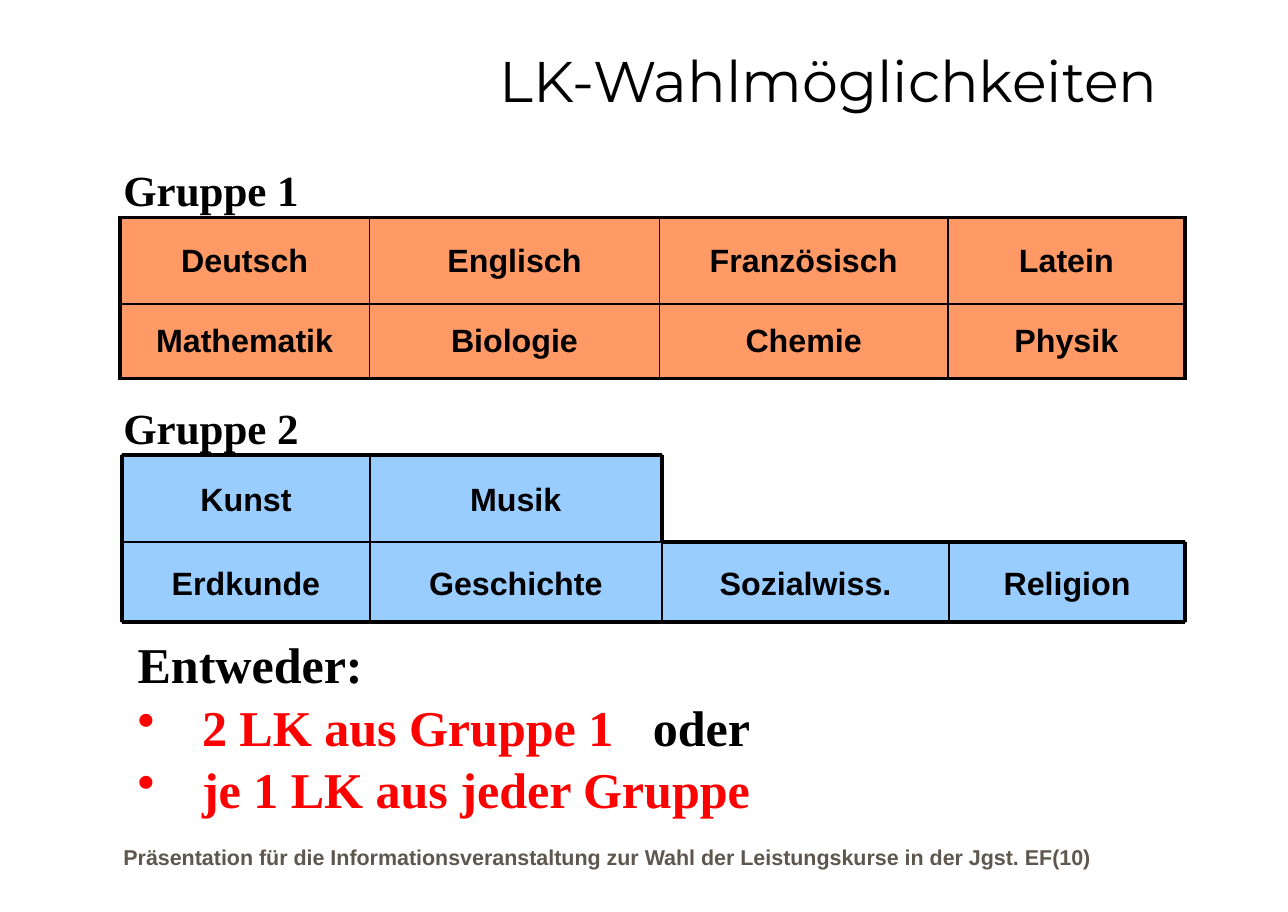
from lxml.etree import SubElement
from pptx import Presentation
from pptx.dml.color import RGBColor
from pptx.enum.shapes import MSO_CONNECTOR as Connector, MSO_SHAPE as Shape
from pptx.enum.text import MSO_ANCHOR as Anchor, PP_ALIGN as Align
from pptx.oxml import parse_xml
from pptx.oxml.ns import nsdecls, qn
from pptx.util import Inches, Pt

BLACK = RGBColor(0x00, 0x00, 0x00)
RED = RGBColor(0xFF, 0x00, 0x00)
GREY = RGBColor(0x5E, 0x57, 0x4E)
ORANGE = RGBColor(0xFF, 0x99, 0x66)
BLUE = RGBColor(0x99, 0xCC, 0xFF)
THIN, THICK = 1, 2.25

GROUP_1 = [["Deutsch", "Englisch", "Französisch", "Latein"],
           ["Mathematik", "Biologie", "Chemie", "Physik"]]
GROUP_2 = [["Kunst", "Musik"],
           ["Erdkunde", "Geschichte", "Sozialwiss.", "Religion"]]


def style(para, size, name, color=BLACK, bold=True):
    """Set the font of a whole paragraph."""
    font = para.font
    font.size, font.name, font.bold = Pt(size), name, bold
    font.color.rgb = color


def add_label(page, box, text, size, name, color=BLACK, bold=True,
              align=Align.LEFT, anchor=Anchor.TOP):
    """Place one line of text in a box."""
    frame = page.shapes.add_textbox(*map(Inches, box)).text_frame
    frame.word_wrap = True
    frame.vertical_anchor = anchor
    para = frame.paragraphs[0]
    para.text, para.alignment = text, align
    style(para, size, name, color, bold)


def fill_subject(frame, subject):
    """Write a centred subject name into a field."""
    para = frame.paragraphs[0]
    para.text, para.alignment = subject, Align.CENTER
    style(para, 18, "Arial")


def set_borders(cell, widths):
    """Draw the left, right, top and bottom borders of a cell."""
    props = cell._tc.get_or_add_tcPr()
    for index, (side, width) in enumerate(zip("LRTB", widths)):
        props.insert(index, parse_xml(
            f'<a:ln{side} {nsdecls("a")} w="{Pt(width)}"><a:solidFill>'
            f'<a:srgbClr val="{BLACK}"/></a:solidFill></a:ln{side}>'))


def add_first_group(page, box, widths, heights):
    """Place the subject table of the first group."""
    rows, cols = len(heights), len(widths)
    table = page.shapes.add_table(rows, cols, *map(Inches, box)).table
    for column, width in zip(table.columns, widths):
        column.width = Inches(width)
    for row, height in zip(table.rows, heights):
        row.height = Inches(height)
    for r, subjects in enumerate(GROUP_1):
        for c, subject in enumerate(subjects):
            cell = table.cell(r, c)
            cell.fill.solid()
            cell.fill.fore_color.rgb = ORANGE
            cell.vertical_anchor = Anchor.MIDDLE
            fill_subject(cell.text_frame, subject)
            edges = (c == 0, c == cols - 1, r == 0, r == rows - 1)
            set_borders(cell, [THICK if edge else THIN for edge in edges])


def add_line(group, start, end, width):
    """Draw a black line between two points."""
    line = group.shapes.add_connector(
        Connector.STRAIGHT, *map(Inches, (*start, *end)))
    line.line.color.rgb = BLACK
    line.line.width = Pt(width)
    SubElement(line._element.spPr, qn("a:effectLst"))


def add_second_group(page, left, top, widths, heights):
    """Place the stepped field of subjects of the second group."""
    group = page.shapes.add_group_shape()
    xs = [left + sum(widths[:i]) for i in range(len(widths) + 1)]
    ys = [top + sum(heights[:i]) for i in range(len(heights) + 1)]
    for y, height, subjects in zip(ys, heights, GROUP_2):
        for x, width, subject in zip(xs, widths, subjects):
            field = group.shapes.add_shape(
                Shape.RECTANGLE, *map(Inches, (x, y, width, height)))
            field.shadow.inherit = False
            field.fill.solid()
            field.fill.fore_color.rgb = BLUE
            field.line.color.rgb = BLACK
            field.line.width = Pt(THIN)
            field.text_frame.vertical_anchor = Anchor.MIDDLE
            fill_subject(field.text_frame, subject)
    step, right = xs[2], xs[-1]
    upper, middle, lower = ys
    for start, end, width in [
            ((left, upper), (step, upper), THICK),
            ((left, middle), (step, middle), THIN),
            ((left, upper), (left, lower), THICK),
            ((xs[1], upper), (xs[1], lower), THIN),
            ((step, upper), (step, middle), THICK),
            ((step, middle), (right, middle), THICK),
            ((right, middle), (right, lower), THICK),
            ((left, lower), (right, lower), THICK)]:
        add_line(group, start, end, width)


def add_choice(page, box):
    """Place the rule for combining the two groups."""
    frame = page.shapes.add_textbox(*map(Inches, box)).text_frame
    frame.word_wrap = True
    head = frame.paragraphs[0]
    head.text = "Entweder:"
    style(head, 28, "Times New Roman")
    for choice, link in [("2 LK aus Gruppe 1", "\toder"),
                         ("je 1 LK aus jeder Gruppe", "")]:
        para = frame.add_paragraph()
        para.space_before = Pt(1.3)
        props = para._p.get_or_add_pPr()
        props.set("marL", str(Inches(0.5)))
        props.set("indent", str(Inches(-0.5)))
        SubElement(props, qn("a:buChar"), char="•")
        style(para, 28, "Times New Roman")
        span = para.add_run()
        span.text = choice
        span.font.color.rgb = RED
        if link:
            para.add_run().text = link


def main():
    """Build and save the slide."""
    deck = Presentation()
    deck.slide_width, deck.slide_height = Inches(10), Inches(7.08)
    page = deck.slides.add_slide(deck.slide_layouts[6])
    add_label(page, (0.83, 0.3, 8.26, 0.72), "LK-Wahlmöglichkeiten", 32,
              "Montserrat", bold=False, align=Align.RIGHT)
    for top, text in [(1.22, "Gruppe 1"), (3.07, "Gruppe 2")]:
        add_label(page, (0.86, top, 1.76, 0.5), text, 24, "Times New Roman")
    add_first_group(page, (0.93, 1.69, 8.27, 1.25),
                    [1.94, 2.25, 2.24, 1.84], [0.67, 0.58])
    add_second_group(page, 0.95, 3.53, [1.92, 2.27, 2.23, 1.83], [0.68, 0.62])
    add_choice(page, (0.97, 4.87, 6.25, 1.5))
    add_label(page, (0.86, 6.49, 8.74, 0.31),
              "Präsentation für die Informationsveranstaltung zur Wahl der "
              "Leistungskurse in der Jgst. EF(10)",
              12, "Arial", GREY, anchor=Anchor.BOTTOM)
    deck.save("out.pptx")


if __name__ == "__main__":
    main()
